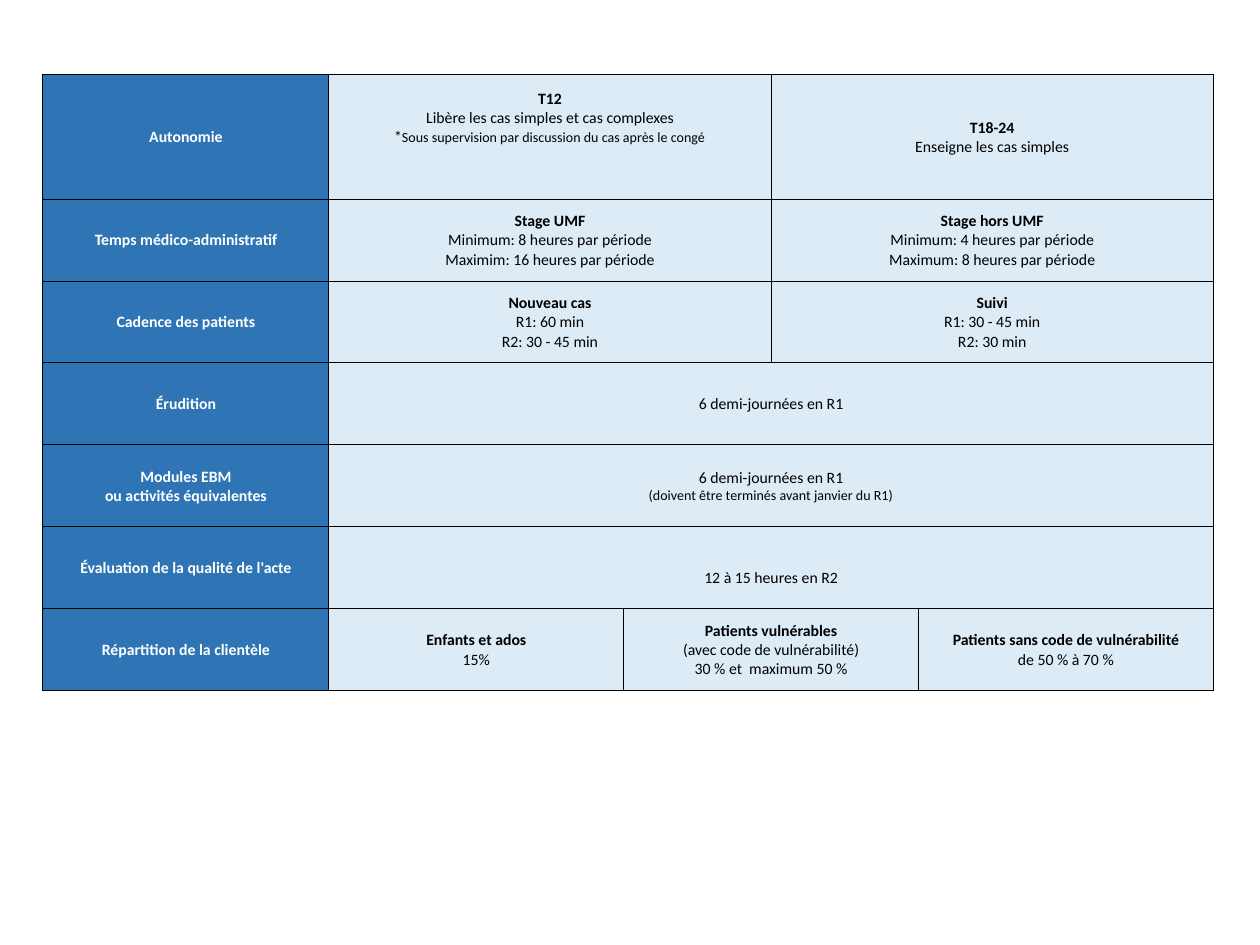
from copy import deepcopy
from dataclasses import dataclass

from lxml.etree import SubElement
from pptx import Presentation
from pptx.dml.color import RGBColor
from pptx.enum.text import MSO_ANCHOR, PP_ALIGN
from pptx.oxml.ns import qn
from pptx.util import Inches, Pt


@dataclass(frozen=True)
class Theme:
    font: str = "Calibri"
    text_size: float = 9
    note_size: float = 8
    label_fill: str = "2F75B5"
    label_text: str = "FFFFFF"
    body_fill: str = "DDEBF7"
    body_text: str = "000000"
    border: str = "000000"
    border_width: float = 0.5


@dataclass(frozen=True)
class Run:
    text: str
    bold: bool = False
    note: bool = False


@dataclass(frozen=True)
class Entry:
    """Cell content: lines of runs, columns covered, extra inset above or below."""
    lines: list
    span: int = 2
    space_above: float = 0
    space_below: float = 0


THEME = Theme()
COLUMN_WIDTHS = [2.27, 2.34, 1.17, 1.17, 2.34]
ROW_HEIGHTS = [0.99] + [0.65] * 6
CELL_INSET = 0.01


def headed(heading, *lines, span=2):
    """Entry with a bold heading above plain lines."""
    return Entry([[Run(heading, bold=True)]] + [[Run(line)] for line in lines], span)


ROWS = [
    (["Autonomie"], [
        Entry([
            [Run("T12", bold=True)],
            [Run("Libère les cas simples et cas complexes")],
            [Run("*"), Run("Sous supervision par discussion du cas après le congé", note=True)],
        ], space_below=0.3),
        headed("T18-24", "Enseigne les cas simples"),
    ]),
    (["Temps médico-administratif"], [
        headed("Stage UMF", "Minimum: 8 heures par période", "Maximim: 16 heures par période"),
        headed("Stage hors UMF", "Minimum: 4 heures par période", "Maximum: 8 heures par période"),
    ]),
    (["Cadence des patients"], [
        headed("Nouveau cas", "R1: 60 min", "R2: 30 - 45 min"),
        headed("Suivi", "R1: 30 - 45 min", "R2: 30 min"),
    ]),
    (["Érudition"], [Entry([[Run("6 demi-journées en R1")]], span=4)]),
    (["Modules EBM", "ou activités équivalentes"], [
        Entry([
            [Run("6 demi-journées en R1")],
            [Run("(doivent être terminés avant janvier du R1)", note=True)],
        ], span=4),
    ]),
    (["Évaluation de la qualité de l'acte"], [
        Entry([[Run("12 à 15 heures en R2")]], span=4, space_above=0.15),
    ]),
    (["Répartition de la clientèle"], [
        headed("Enfants et ados", "15%", span=1),
        headed("Patients vulnérables", "(avec code de vulnérabilité)", "30 % et  maximum 50 %"),
        headed("Patients sans code de vulnérabilité", "de 50 % à 70 %", span=1),
    ]),
]


def style_cell(cell, fill):
    properties = cell._tc.get_or_add_tcPr()
    for side in ("a:lnL", "a:lnR", "a:lnT", "a:lnB"):
        line = SubElement(properties, qn(side), w=str(Pt(THEME.border_width)))
        SubElement(SubElement(line, qn("a:solidFill")), qn("a:srgbClr"), val=THEME.border)
    cell.fill.solid()
    cell.fill.fore_color.rgb = RGBColor.from_string(fill)


def write_entry(cell, entry, color):
    cell.vertical_anchor = MSO_ANCHOR.MIDDLE
    cell.margin_left = cell.margin_right = Inches(CELL_INSET)
    cell.margin_top = Inches(CELL_INSET + entry.space_above)
    cell.margin_bottom = Inches(entry.space_below)
    paragraph = cell.text_frame.paragraphs[0]
    paragraph.alignment = PP_ALIGN.CENTER
    for number, line in enumerate(entry.lines):
        if number:
            paragraph.add_line_break()
            # The break takes the type size of the line it ends.
            paragraph._p[-1].append(deepcopy(run._r.rPr))
        for part in line:
            run = paragraph.add_run()
            run.text = part.text
            run.font.name = THEME.font
            run.font.size = Pt(THEME.note_size if part.note else THEME.text_size)
            run.font.bold = part.bold
            run.font.color.rgb = RGBColor.from_string(color)


def add_requirements_table(slide, left, top, width, height):
    table = slide.shapes.add_table(
        len(ROW_HEIGHTS), len(COLUMN_WIDTHS), left, top, width, height).table
    table.first_row = table.horz_banding = False
    for column, column_width in zip(table.columns, COLUMN_WIDTHS):
        column.width = Inches(column_width)
    for row, row_height in zip(table.rows, ROW_HEIGHTS):
        row.height = Inches(row_height)
        for index, cell in enumerate(row.cells):
            style_cell(cell, THEME.body_fill if index else THEME.label_fill)

    for row_index, (label, entries) in enumerate(ROWS):
        label_entry = Entry([[Run(line, bold=True)] for line in label])
        write_entry(table.cell(row_index, 0), label_entry, THEME.label_text)
        column_index = 1
        for entry in entries:
            cell = table.cell(row_index, column_index)
            column_index += entry.span
            if entry.span > 1:
                cell.merge(table.cell(row_index, column_index - 1))
            write_entry(cell, entry, THEME.body_text)


def main():
    presentation = Presentation()
    presentation.slide_width = Inches(10)
    presentation.slide_height = Inches(7.5)
    slide = presentation.slides.add_slide(presentation.slide_layouts[6])
    add_requirements_table(
        slide, Inches(0.34), Inches(0.59),
        Inches(sum(COLUMN_WIDTHS)), Inches(sum(ROW_HEIGHTS)))
    presentation.save("out.pptx")


if __name__ == "__main__":
    main()
